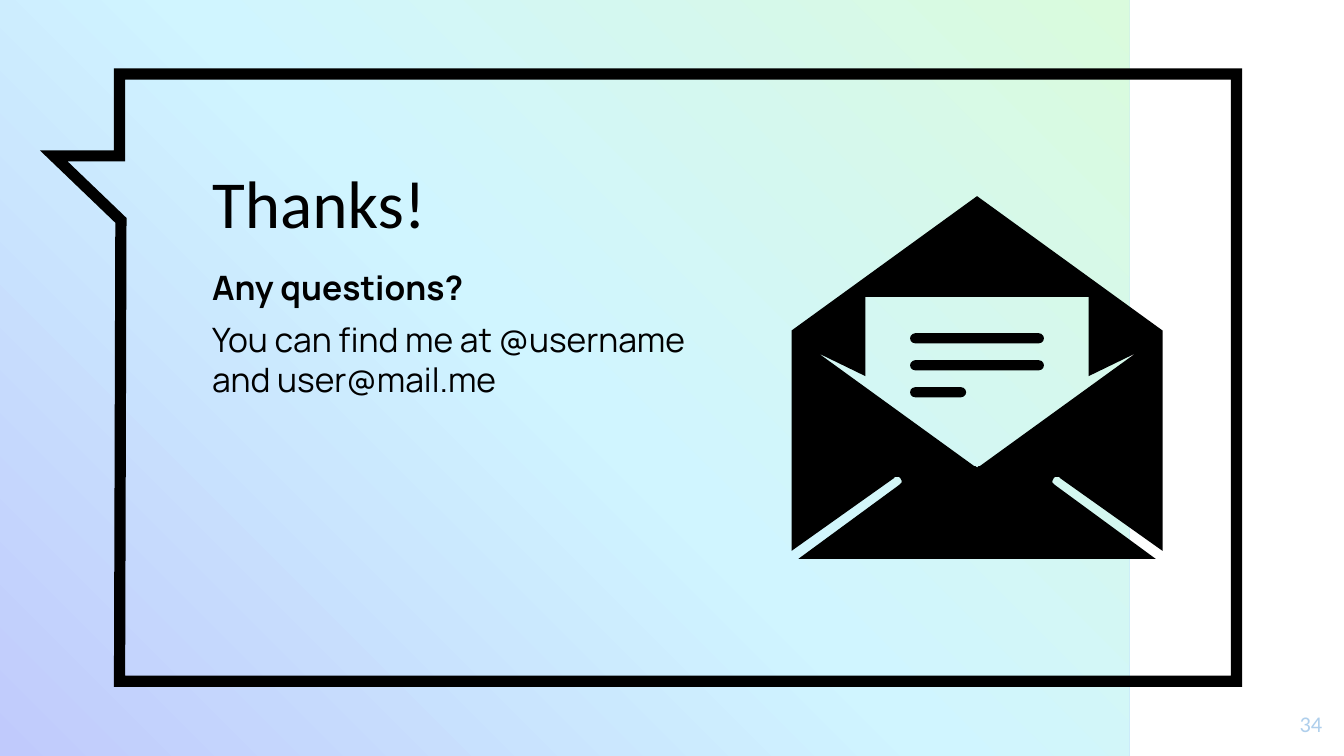
from dataclasses import dataclass

from lxml.etree import SubElement
from pptx import Presentation
from pptx.dml.color import RGBColor as Rgb
from pptx.enum.shapes import MSO_SHAPE as Kind
from pptx.enum.text import MSO_ANCHOR as Anchor, PP_ALIGN as Align
from pptx.oxml.ns import qn
from pptx.util import Cm, Pt

Point = tuple[int, int]
GRID = Cm(0.0254)  # outline points are counted in this unit
AXIS = 727  # the envelope is symmetric about this line


@dataclass(frozen=True)
class Theme:
    ink: str = "000000"
    pale: str = "AFCFEC"
    fade: tuple[str, ...] = ("C0CAFC", "D0F5FF", "DAFBDD")
    head: str = "Calibri"
    body: str = "Manrope"
    big: int = 36
    mid: int = 18
    small: int = 12
    edge: int = 6


@dataclass(frozen=True)
class Box:
    left: float
    top: float
    width: float
    height: float

    def place(self) -> tuple[int, ...]:
        return tuple(Cm(v) for v in (self.left, self.top, self.width, self.height))


@dataclass(frozen=True)
class Line:
    text: str
    font: str
    size: int
    color: str
    bold: bool = False
    gap: int = 0
    align: Align = Align.LEFT


def write(shape, lines: list[Line], anchor: Anchor = Anchor.TOP) -> None:
    frame = shape.text_frame
    frame.word_wrap = True
    frame.vertical_anchor = anchor
    frame.margin_left = frame.margin_right = Cm(0.25)
    frame.margin_top = frame.margin_bottom = Cm(0.25)
    for i, line in enumerate(lines):
        para = frame.add_paragraph() if i else frame.paragraphs[0]
        para.text = line.text
        para.alignment = line.align
        para.space_before = Pt(line.gap)
        font = para.font
        font.name, font.size, font.bold = line.font, Pt(line.size), line.bold
        font.color.rgb = Rgb.from_string(line.color)


def paint(shape, color: str) -> None:
    shape.shadow.inherit = False
    shape.fill.solid()
    shape.fill.fore_color.rgb = Rgb.from_string(color)
    shape.line.fill.background()


def blend(shape, colors: tuple[str, ...], angle: int) -> None:
    shape.shadow.inherit = False
    shape.line.fill.background()
    shape.fill.gradient()
    shape.fill.gradient_angle = angle
    stops = shape.element.spPr.find(".//" + qn("a:gsLst"))
    for old in list(stops):
        stops.remove(old)
    for i, color in enumerate(colors):
        pos = 100000 * i // (len(colors) - 1)
        stop = SubElement(stops, qn("a:gs"), pos=str(pos))
        SubElement(stop, qn("a:srgbClr"), val=color)


def trace(shapes, loops: list[list[Point]]):
    pen = shapes.build_freeform(*loops[0][0], scale=GRID)
    for i, loop in enumerate(loops):
        if i:
            pen.move_to(*loop[0])
        pen.add_line_segments(loop[1:], close=True)
    shape = pen.convert_to_shape()
    shape.shadow.inherit = False
    return shape


def mirror(half: list[Point]) -> list[Point]:
    return half + [(2 * AXIS - x, y) for x, y in reversed(half)]


def main() -> None:
    look = Theme()
    deck = Presentation()
    deck.slide_width, deck.slide_height = Cm(25.4), Cm(14.29)
    slide = deck.slides.add_slide(deck.slide_layouts[5])
    shapes = slide.shapes

    # Title
    title = shapes.title
    title.left, title.top, title.width, title.height = Box(3.76, 2.77, 10.06, 2.06).place()
    write(title, [Line("Thanks!", look.head, look.big, look.ink)], Anchor.BOTTOM)

    # Gradient panel, behind the title
    panel = shapes.add_shape(Kind.RECTANGLE, *Box(0, 0, 21.34, 14.29).place())
    blend(panel, look.fade, 45)
    title.element.addprevious(panel.element)

    # Speech bubble
    bubble = trace(shapes, [[(89, 55), (920, 55), (920, 507), (89, 507),
                             (90, 164), (40, 116), (89, 116)]])
    bubble.fill.background()
    bubble.line.width = Pt(look.edge)
    bubble.line.color.rgb = Rgb.from_string(look.ink)
    SubElement(bubble.line._get_or_add_ln(), qn("a:miter"), lim="800000")
    title.element.addprevious(bubble.element)

    # Contact text
    note = shapes.add_textbox(*Box(3.76, 4.8, 10.06, 5.82).place())
    write(note, [
        Line("Any questions?", look.body, look.mid, look.ink, True, 6),
        Line("You can find me at @username and user@mail.me",
             look.body, look.mid, look.ink, gap=6),
    ])

    # Envelope: the letter is a hole in the body
    letter = [(644, 221), (644, 280), (609, 263), (725, 347), (726, 347), (727, 348)]
    body = [(727, 146), (589, 246), (589, 410), (665, 356), (666, 355), (669, 355),
            (670, 356), (671, 358), (671, 359), (670, 360), (669, 361), (594, 416)]
    paint(trace(shapes, [mirror(letter), mirror(body)]), look.ink)

    # Lines of writing on the letter
    for i, width in enumerate((2.53, 2.53, 1.06)):
        bar = shapes.add_shape(Kind.ROUNDED_RECTANGLE,
                               *Box(17.2, 6.3 + 0.51 * i, width, 0.19).place())
        bar.adjustments[0] = 0.5
        paint(bar, look.ink)

    # Page number
    page = shapes.add_textbox(*Box(23.72, 13.18, 1.52, 1.09).place())
    write(page, [Line("34", look.head, look.small, look.pale, align=Align.RIGHT)])

    deck.save("out.pptx")


if __name__ == "__main__":
    main()
